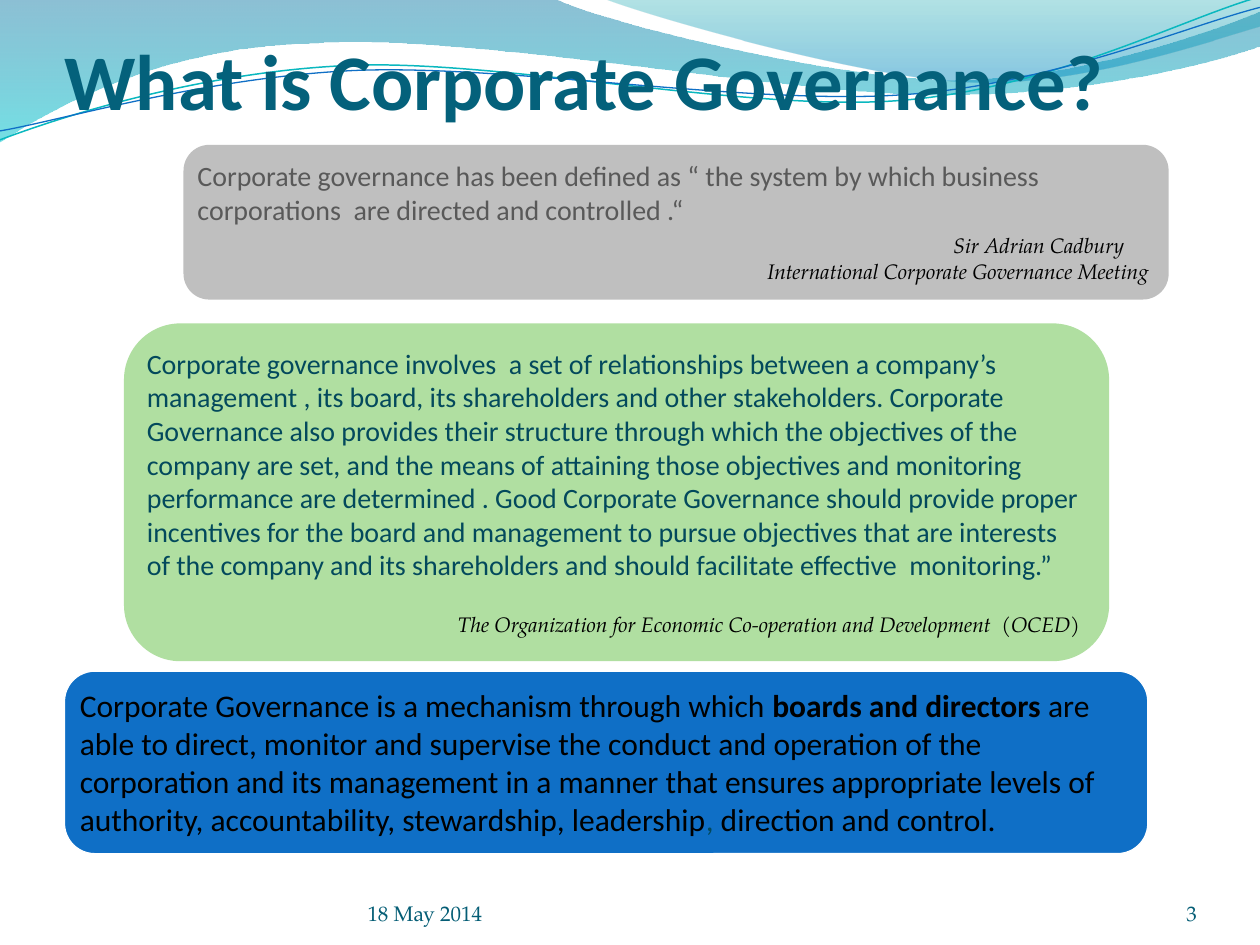
from lxml import etree
from pptx import Presentation
from pptx.dml.color import RGBColor
from pptx.enum.shapes import MSO_SHAPE
from pptx.enum.text import MSO_ANCHOR, PP_ALIGN
from pptx.oxml.ns import qn
from pptx.util import Cm, Pt

ROUNDED = MSO_SHAPE.ROUNDED_RECTANGLE
TOP, BOTTOM = MSO_ANCHOR.TOP, MSO_ANCHOR.BOTTOM
LEFT, RIGHT = PP_ALIGN.LEFT, PP_ALIGN.RIGHT
SANS, SERIF = "Calibri", "TeX Gyre Pagella"


def colour(code):
    return RGBColor.from_string(code)


def add_text(para, text, size=16, font=SANS, ink="000000", bold=False,
             italic=False, align=LEFT, before=0, indent=0):
    para.alignment = align
    para.space_before = Pt(before)
    if indent:
        para._p.get_or_add_pPr().set("marL", str(Cm(indent)))
    span = para.add_run()
    span.text = text
    span.font.size = Pt(size)
    span.font.name = font
    span.font.bold = bold
    span.font.italic = italic
    span.font.color.rgb = colour(ink)


deck = Presentation()
deck.slide_width, deck.slide_height = Cm(25.4), Cm(19.05)
page = deck.slides.add_slide(deck.slide_layouts[5])

waves = [
    ([[(0, 0)], [(11.18, -0.03)],
      [(12.09, 0.43), (16.87, 1.6), (19.25, 1.6)],
      [(21.67, 1.6), (24.33, 0.66), (25.4, 0.23)],
      [(25.43, 0.91)],
      [(24.97, 1.12), (22.1, 1.93), (18.95, 1.91)],
      [(15.8, 1.91), (9.7, 0.71), (6.53, 0.86)],
      [(3.28, 0.91), (1.17, 2.11), (-0.03, 2.87)],
      [(0, 0)]],
     [(0, "0074A1", 45), (1, "00C6CF", 55)], None),
    ([[(12.17, -0.03)],
      [(12.93, 0.28), (17.32, 1.57), (19.53, 1.65)],
      [(21.74, 1.75), (24.41, 0.81), (25.4, 0.53)],
      [(25.4, 0)], [(12.17, -0.03)]],
     [(0, "00A1A9", 30), (0.8, "008BBF", 45)], None),
    ([[(0, 2.82)],
      [(1.22, 2.36), (4.01, 1.45), (7.04, 1.32)],
      [(10.03, 1.19), (15.06, 2.26), (18.11, 2.03)],
      [(21.16, 1.8), (23.83, 0.38), (25.35, -0.05)]],
     [], ("0AB8BF", 0.85)),
    ([[(0, 2.64)],
      [(1.19, 2.44), (4.17, 1.55), (7.19, 1.42)],
      [(10.24, 1.3), (15.16, 2.13), (18.21, 1.91)],
      [(21.23, 1.7), (23.9, 0.53), (25.4, 0.15)]],
     [], ("0F6FC6", 0.75)),
]
for segments, stops, line in waves:
    points = [(Cm(x), Cm(y)) for segment in segments for x, y in segment]
    builder = page.shapes.build_freeform(*points[0])
    builder.add_line_segments(points[1:], close=bool(stops))
    wave = builder.convert_to_shape()
    wave.shadow.inherit = False
    steps = iter(list(wave._element.iter(qn("a:lnTo"))))
    for segment in segments[1:]:
        curve = next(steps)
        if len(segment) == 3:
            curve.tag = qn("a:cubicBezTo")
            for step in (next(steps), next(steps)):
                curve.append(step[0])
                step.getparent().remove(step)
    if line:
        wave.fill.background()
        wave.line.color.rgb = colour(line[0])
        wave.line.width = Pt(line[1])
        continue
    wave.line.fill.background()
    wave.fill.gradient()
    wave.fill.gradient_angle = 270
    for stop, (position, tint, opacity) in zip(wave.fill.gradient_stops, stops):
        stop.position = position
        stop.color.rgb = colour(tint)
    for node, (position, tint, opacity) in zip(wave._element.iter(qn("a:srgbClr")), stops):
        etree.SubElement(node, qn("a:alpha")).set("val", str(opacity * 1000))

title = page.shapes.title
title.left, title.top, title.width, title.height = Cm(1.3), Cm(1.4), Cm(22.22), Cm(1.14)
frame = title.text_frame
frame.margin_left = frame.margin_right = frame.margin_bottom = 0
frame.margin_top = Cm(0.13)
frame.vertical_anchor = BOTTOM
frame.word_wrap = True
add_text(frame.paragraphs[0], "What is Corporate Governance?", size=45, ink="04617B", bold=True)
page.shapes._spTree.append(title._element)

mechanism = dict(size=18)
credit = dict(size=12, font=SERIF, italic=True)
panels = [
    ((1.3, 13.53, 21.84, 3.68), "0F6FC6", "FFFFFF", [
        [("Corporate Governance is a mechanism through which ", mechanism),
         ("boards and directors ", dict(mechanism, bold=True)),
         ("are able to direct, monitor and supervise the conduct and operation of the "
          "corporation and its management in a manner that ensures appropriate levels of "
          "authority, accountability, stewardship, leadership", mechanism),
         (",", dict(mechanism, ink="03495C")),
         (" direction and control.", mechanism)]]),
    ((3.7, 2.92, 19.86, 3.12), "BFBFBF", None, [
        [("Corporate governance has been defined as “ the system by which business "
          "corporations  are directed and controlled .“", dict(ink="595959"))],
        [("Sir Adrian Cadbury", dict(credit, indent=15.24, before=3.5))],
        [("International Corporate Governance Meeting ", dict(credit, align=RIGHT, before=1))]]),
    ((2.5, 6.52, 19.86, 6.81), "B0DFA1", None, [
        [("Corporate governance involves  a set of relationships between a company’s "
          "management , its board, its shareholders and other stakeholders. Corporate "
          "Governance also provides their structure through which the objectives of the "
          "company are set, and the means of attaining those objectives and monitoring "
          "performance are determined . Good Corporate Governance should provide proper "
          "incentives for the board and management to pursue objectives that are interests "
          "of the company and its shareholders and should facilitate effective  monitoring.”",
          dict(ink="03495C"))],
        [("The Organization for Economic Co-operation and Development  (OCED) ",
          dict(credit, align=RIGHT, before=17))]]),
]
for place, fill, edge, paragraphs in panels:
    panel = page.shapes.add_shape(ROUNDED, *map(Cm, place))
    panel.shadow.inherit = False
    panel.fill.solid()
    panel.fill.fore_color.rgb = colour(fill)
    if edge:
        panel.line.color.rgb = colour(edge)
        panel.line.width = Pt(0.75)
    else:
        panel.line.fill.background()
    frame = panel.text_frame
    frame.margin_left = frame.margin_right = frame.margin_top = frame.margin_bottom = Cm(0.13)
    frame.vertical_anchor = TOP
    frame.word_wrap = True
    for index, spans in enumerate(paragraphs):
        para = frame.add_paragraph() if index else frame.paragraphs[0]
        for text, style in spans:
            add_text(para, text, **style)

for text, left, width, align in [("18 May 2014", 7.41, 9.32, LEFT), ("3", 22.02, 2.11, RIGHT)]:
    box = page.shapes.add_textbox(Cm(left), Cm(17.65), Cm(width), Cm(1.02))
    frame = box.text_frame
    frame.margin_left = frame.margin_right = frame.margin_top = frame.margin_bottom = 0
    frame.vertical_anchor = BOTTOM
    frame.word_wrap = True
    add_text(frame.paragraphs[0], text, size=12, font=SERIF, ink="045D75", align=align)

deck.save("out.pptx")
